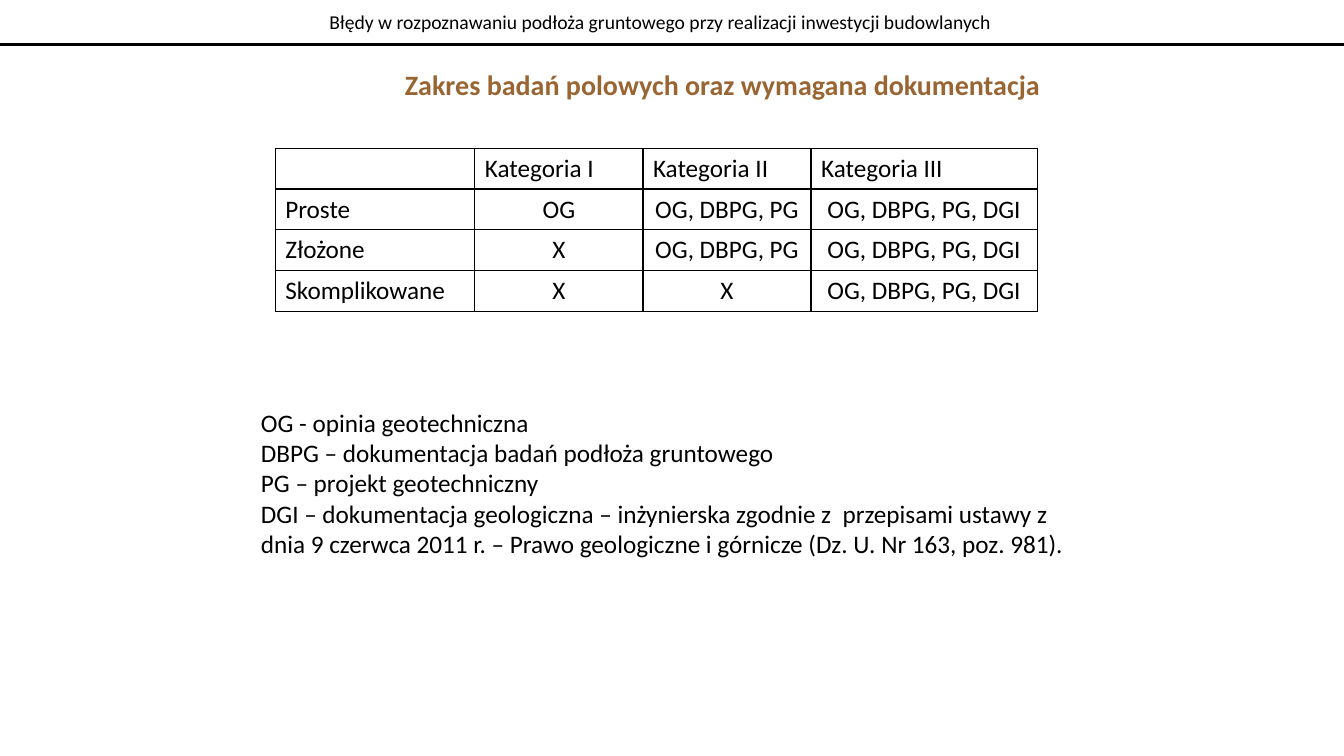
from lxml.etree import SubElement
from pptx import Presentation
from pptx.dml.color import RGBColor
from pptx.enum.shapes import MSO_CONNECTOR
from pptx.enum.text import MSO_ANCHOR, PP_ALIGN
from pptx.oxml.ns import qn
from pptx.util import Pt

FONT = "Calibri"
BLACK = "000000"
BROWN = "996633"
PAGE_WIDTH, PAGE_HEIGHT = 960, 540

HEADER = "Błędy w rozpoznawaniu podłoża gruntowego przy realizacji inwestycji budowlanych"
TITLE = "Zakres badań polowych oraz wymagana dokumentacja"
REQUIREMENTS = [
    ["", "Kategoria I", "Kategoria II", "Kategoria III"],
    ["Proste", "OG", "OG, DBPG, PG", "OG, DBPG, PG, DGI"],
    ["Złożone", "X", "OG, DBPG, PG", "OG, DBPG, PG, DGI"],
    ["Skomplikowane", "X", "X", "OG, DBPG, PG, DGI"],
]
COLUMN_WIDTHS = [142.6, 120.1, 120.1, 161.5]
LEGEND = [
    "OG - opinia geotechniczna",
    "DBPG – dokumentacja badań podłoża gruntowego",
    "PG – projekt geotechniczny",
    "DGI – dokumentacja geologiczna – inżynierska zgodnie z  przepisami ustawy z  "
    "dnia 9 czerwca 2011 r. – Prawo geologiczne i górnicze (Dz. U. Nr 163, poz. 981).",
]


def color(value):
    return RGBColor.from_string(value)


def write(para, text, size, ink=BLACK, bold=False, align=PP_ALIGN.LEFT):
    para.alignment = align
    span = para.add_run()
    span.text = text
    span.font.name = FONT
    span.font.size = Pt(size)
    span.font.bold = bold
    span.font.color.rgb = color(ink)


def add_text(page, left, top, width, height, lines, size, **style):
    box = page.shapes.add_textbox(Pt(left), Pt(top), Pt(width), Pt(height))
    frame = box.text_frame
    frame.word_wrap = True
    for index, line in enumerate(lines):
        para = frame.add_paragraph() if index else frame.paragraphs[0]
        write(para, line, size, **style)


def add_header(page, left, top, width, height):
    # Running title centred above a full-width rule
    margin = 142.6
    add_text(page, left + margin, top + 3.6, 658, 24.5, [HEADER], 14,
             align=PP_ALIGN.CENTER)
    bottom = Pt(top + height)
    rule = page.shapes.add_connector(
        MSO_CONNECTOR.STRAIGHT, Pt(left), bottom, Pt(left + width), bottom)
    rule.line.color.rgb = color(BLACK)
    rule.line.width = Pt(2)
    SubElement(rule._element.spPr, qn("a:effectLst"))


def add_borders(cell):
    # Borders come before the fill in the cell properties
    properties = cell._tc.get_or_add_tcPr()
    for index, side in enumerate(("lnL", "lnR", "lnT", "lnB")):
        border = properties.makeelement(qn(f"a:{side}"), {"w": str(Pt(1))})
        fill = SubElement(border, qn("a:solidFill"))
        SubElement(fill, qn("a:srgbClr"), val=BLACK)
        properties.insert(index, border)


def add_requirements(page, left, top, row_height):
    rows, columns = len(REQUIREMENTS), len(COLUMN_WIDTHS)
    table = page.shapes.add_table(
        rows, columns, Pt(left), Pt(top),
        Pt(sum(COLUMN_WIDTHS)), Pt(rows * row_height)).table
    table.first_row = table.horz_banding = False
    for column, width in zip(table.columns, COLUMN_WIDTHS):
        column.width = Pt(width)
    for row_index, labels in enumerate(REQUIREMENTS):
        table.rows[row_index].height = Pt(row_height)
        for column_index, label in enumerate(labels):
            cell = table.cell(row_index, column_index)
            cell.fill.background()
            cell.vertical_anchor = MSO_ANCHOR.TOP
            add_borders(cell)
            # Headings stay left, values are centred
            is_value = row_index and column_index
            align = PP_ALIGN.CENTER if is_value else PP_ALIGN.LEFT
            if label:
                write(cell.text_frame.paragraphs[0], label, 18, align=align)


def main():
    deck = Presentation()
    deck.slide_width, deck.slide_height = Pt(PAGE_WIDTH), Pt(PAGE_HEIGHT)
    page = deck.slides.add_slide(deck.slide_layouts[6])
    add_requirements(page, 196.6, 105.8, 29.2)
    add_text(page, 179.3, 287.3, 601.2, 116.6, LEGEND, 18)
    add_text(page, 282.2, 44.6, 486, 31.7, [TITLE], 20,
             ink=BROWN, bold=True, align=PP_ALIGN.JUSTIFY)
    add_header(page, 0, 0, PAGE_WIDTH, 31.7)
    deck.save("out.pptx")


if __name__ == "__main__":
    main()
